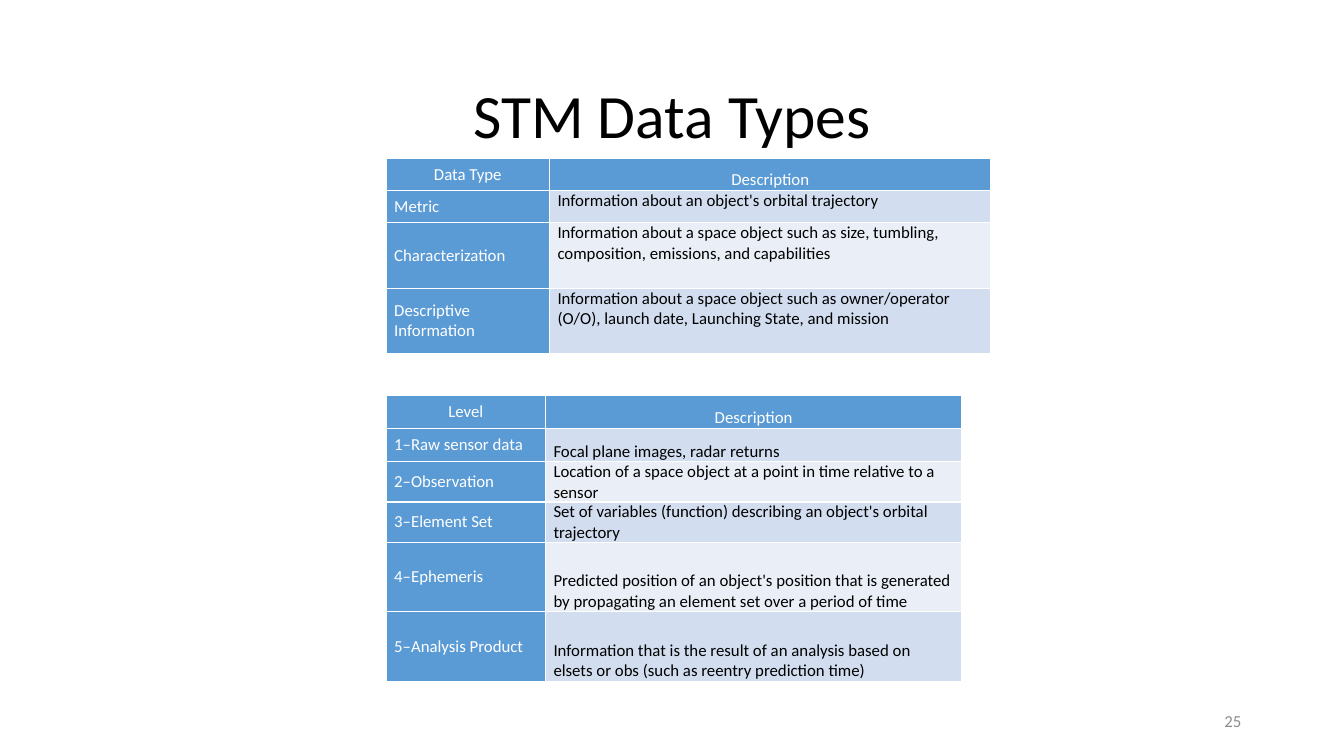
from dataclasses import dataclass

from lxml.etree import SubElement
from pptx import Presentation
from pptx.dml.color import RGBColor
from pptx.enum.text import MSO_ANCHOR as Anchor, PP_ALIGN as Align
from pptx.oxml.ns import qn
from pptx.util import Inches, Pt

TITLE = "STM Data Types"
PAGE = "25"
DATA_TYPES = [
    ("Data Type", "Description"),
    ("Metric", "Information about an object's orbital trajectory"),
    ("Characterization",
     "Information about a space object such as size, tumbling, "
     "composition, emissions, and capabilities"),
    ("Descriptive Information",
     "Information about a space object such as owner/operator (O/O), "
     "launch date, Launching State, and mission"),
]
LEVELS = [
    ("Level", "Description"),
    ("1–Raw sensor data", "Focal plane images, radar returns"),
    ("2–Observation",
     "Location of a space object at a point in time relative to a sensor"),
    ("3–Element Set",
     "Set of variables (function) describing an object's orbital trajectory"),
    ("4–Ephemeris",
     "Predicted position of an object's position that is generated by "
     "propagating an element set over a period of time"),
    ("5–Analysis Product",
     "Information that is the result of an analysis based on elsets or obs "
     "(such as reentry prediction time)"),
]


@dataclass(frozen=True)
class Theme:
    font: str = "Calibri"
    title_size: int = 44
    body_size: int = 12
    black: str = "000000"
    white: str = "FFFFFF"
    gray: str = "8C8C8C"
    accent: str = "5B9BD5"
    bands: tuple = ("D2DEEF", "EAEFF7")


THEME = Theme()
WIDTH, HEIGHT = 13.33, 7.5
MARGIN = 0.92
TABLE_LEFT = 3.83

# rows, top, column widths, row heights, anchor of the descriptions
TABLES = [
    (DATA_TYPES, 1.57, (1.62, 4.38), [0.32] * 2 + [0.65] * 2, Anchor.TOP),
    (LEVELS, 3.92, (1.58, 4.13), [0.33] * 4 + [0.69] * 2, Anchor.BOTTOM),
]


def write(tf, text, size, color, align):
    p = tf.paragraphs[0]
    p.alignment = align
    r = p.add_run()
    r.text = text
    r.font.name = THEME.font
    r.font.size = Pt(size)
    r.font.color.rgb = RGBColor.from_string(color)
    return p


def add_text(s, box, text, size, color, align):
    tf = s.shapes.add_textbox(*map(Inches, box)).text_frame
    tf.word_wrap = True
    tf.vertical_anchor = Anchor.MIDDLE
    write(tf, text, size, color, align)


def add_borders(cell):
    """Draw thin white lines on all four sides; call before filling the cell."""
    tc_pr = cell._tc.get_or_add_tcPr()
    for side in ("lnL", "lnR", "lnT", "lnB"):
        ln = SubElement(tc_pr, qn(f"a:{side}"), w=str(Pt(1)))
        SubElement(SubElement(ln, qn("a:solidFill")), qn("a:srgbClr"), val=THEME.white)


def fill_cell(cell, text, row, col, anchor):
    header, label = row == 0, col == 0
    dark = header or label
    cell.margin_left = cell.margin_right = Inches(0.08)
    cell.margin_top = cell.margin_bottom = 0
    cell.vertical_anchor = anchor
    add_borders(cell)
    cell.fill.solid()
    cell.fill.fore_color.rgb = RGBColor.from_string(
        THEME.accent if dark else THEME.bands[(row - 1) % 2])
    p = write(cell.text_frame, text, THEME.body_size,
              THEME.white if dark else THEME.black,
              Align.CENTER if header else Align.LEFT)
    p.space_before = p.space_after = Pt(2)


def add_data_table(s, rows, top, widths, heights, body_anchor):
    box = (TABLE_LEFT, top, sum(widths), sum(heights))
    table = s.shapes.add_table(len(rows), len(widths), *map(Inches, box)).table
    table.first_row = table.horz_banding = False
    for column, width in zip(table.columns, widths):
        column.width = Inches(width)
    for i, (texts, height) in enumerate(zip(rows, heights)):
        table.rows[i].height = Inches(height)
        anchors = (Anchor.MIDDLE, Anchor.BOTTOM if i == 0 else body_anchor)
        for j, (text, anchor) in enumerate(zip(texts, anchors)):
            fill_cell(table.cell(i, j), text, i, j, anchor)


def main():
    prs = Presentation()
    prs.slide_width, prs.slide_height = Inches(WIDTH), Inches(HEIGHT)
    s = prs.slides.add_slide(prs.slide_layouts[6])
    add_text(s, (MARGIN, 0.4, WIDTH - 2 * MARGIN, 1.45), TITLE,
             THEME.title_size, THEME.black, Align.CENTER)
    for spec_row in TABLES:
        add_data_table(s, *spec_row)
    add_text(s, (WIDTH - MARGIN - 3, 6.95, 3, 0.4), PAGE,
             THEME.body_size, THEME.gray, Align.RIGHT)
    prs.save("out.pptx")


if __name__ == "__main__":
    main()
